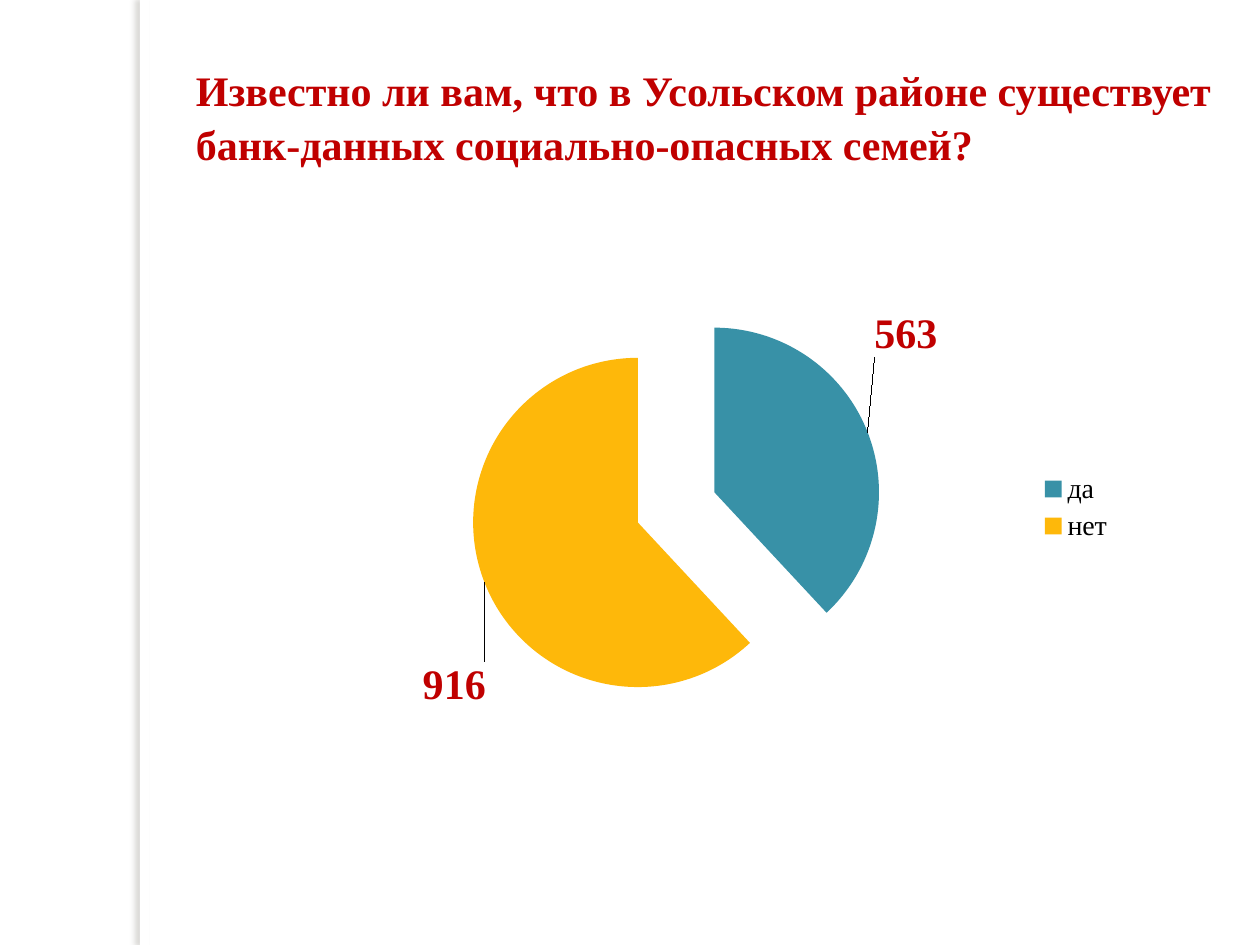
from lxml import etree
from pptx import Presentation
from pptx.chart.data import CategoryChartData
from pptx.dml.color import RGBColor
from pptx.enum.chart import XL_CHART_TYPE, XL_LABEL_POSITION, XL_LEGEND_POSITION
from pptx.enum.shapes import MSO_SHAPE
from pptx.oxml import parse_xml
from pptx.oxml.ns import nsdecls, qn
from pptx.util import Cm, Pt

PIE = XL_CHART_TYPE.PIE
OUTSIDE_END = XL_LABEL_POSITION.OUTSIDE_END
LEGEND_RIGHT = XL_LEGEND_POSITION.RIGHT
RECTANGLE = MSO_SHAPE.RECTANGLE

WHITE = RGBColor(0xFF, 0xFF, 0xFF)
BLACK = RGBColor(0, 0, 0)
RED = RGBColor(0xC0, 0, 0)
TEAL = RGBColor(0x38, 0x91, 0xA7)
YELLOW = RGBColor(0xFE, 0xB8, 0x0A)

SERIF = "Times New Roman"
TITLE = ("Известно ли вам, что в Усольском районе существует "
         "банк-данных социально-опасных семей?")
# answer, count, colour, shift of the label as a share of the chart size
ANSWERS = [
    ("да", 563, TEAL, (0, -0.16)),
    ("нет", 916, YELLOW, (0.01, 0.17)),
]


def style_font(font, name, size, color, bold=False):
    font.name = name
    font.size = Pt(size)
    font.color.rgb = color
    font.bold = bold


def manual_layout(**values):
    """Return a c:layout element with the given children in order."""
    layout = parse_xml(f"<c:layout {nsdecls('c')}><c:manualLayout/></c:layout>")
    for tag, value in values.items():
        etree.SubElement(layout[0], qn(f"c:{tag}")).set("val", str(value))
    return layout


def add_side_strip(slide):
    """Add the white strip whose shadow falls to the left."""
    sp = slide.shapes.add_shape(RECTANGLE, Cm(2.82), 0, Cm(0.2), Cm(19.05))
    sp.fill.solid()
    sp.fill.fore_color.rgb = WHITE
    sp.line.fill.background()
    sp._element.spPr.append(parse_xml(
        f'<a:effectLst {nsdecls("a")}>'
        f'<a:outerShdw blurRad="{Pt(3)}" dist="{Pt(3)}" dir="10800000">'
        '<a:srgbClr val="736F63"><a:alpha val="25000"/></a:srgbClr>'
        '</a:outerShdw></a:effectLst>'))


def add_title(slide):
    tf = slide.shapes.add_textbox(Cm(3.7), Cm(1.12), Cm(21), Cm(2.31)).text_frame
    tf.word_wrap = True
    p = tf.paragraphs[0]
    p.text = TITLE
    p.line_spacing = 1.06
    style_font(p.runs[0].font, SERIF, 24, RED, bold=True)


def style_slice(series, index, color, shift):
    point = series.points[index]
    point.format.fill.solid()
    point.format.fill.fore_color.rgb = color
    label = point.data_label
    style_font(label.font, SERIF, 24, RED, bold=True)
    label.position = OUTSIDE_END
    dx, dy = shift
    idx = series._element.xpath(f"c:dLbls/c:dLbl/c:idx[@val='{index}']")[0]
    idx.addnext(manual_layout(x=dx, y=dy))


def add_answer_pie(slide):
    data = CategoryChartData()
    data.categories = [answer for answer, *_ in ANSWERS]
    data.add_series("Series 1", [count for _, count, *_ in ANSWERS])
    chart = slide.shapes.add_chart(
        PIE, Cm(6.35), Cm(5.72), Cm(16.36), Cm(9.02), data).chart
    chart.has_title = False
    style_font(chart.font, "Calibri", 10, BLACK)
    chart.has_legend = True
    chart.legend.position = LEGEND_RIGHT
    chart.legend.include_in_layout = False
    style_font(chart.legend.font, SERIF, 16, BLACK)

    plot = chart.plots[0]
    plot.vary_by_categories = True
    series = plot.series[0]
    labels = series.data_labels
    labels.show_value = True
    style_font(labels.font, SERIF, 24, RED, bold=True)
    for i, (_, _, color, shift) in enumerate(ANSWERS):
        style_slice(series, i, color, shift)
    series._element.find(qn("c:dPt")).addprevious(
        parse_xml(f'<c:explosion {nsdecls("c")} val="25"/>'))

    plot_area = chart._chartSpace.chart.plotArea
    for old in plot_area.findall(qn("c:layout")):
        plot_area.remove(old)
    plot_area.insert(0, manual_layout(
        layoutTarget="inner", xMode="edge", yMode="edge",
        x=0.19, y=0.04, w=0.51, h=0.92))


def main():
    prs = Presentation()
    prs.slide_width, prs.slide_height = Cm(25.4), Cm(19.05)
    slide = prs.slides.add_slide(prs.slide_layouts[6])
    add_side_strip(slide)
    add_title(slide)
    add_answer_pie(slide)
    prs.save("out.pptx")


if __name__ == "__main__":
    main()
